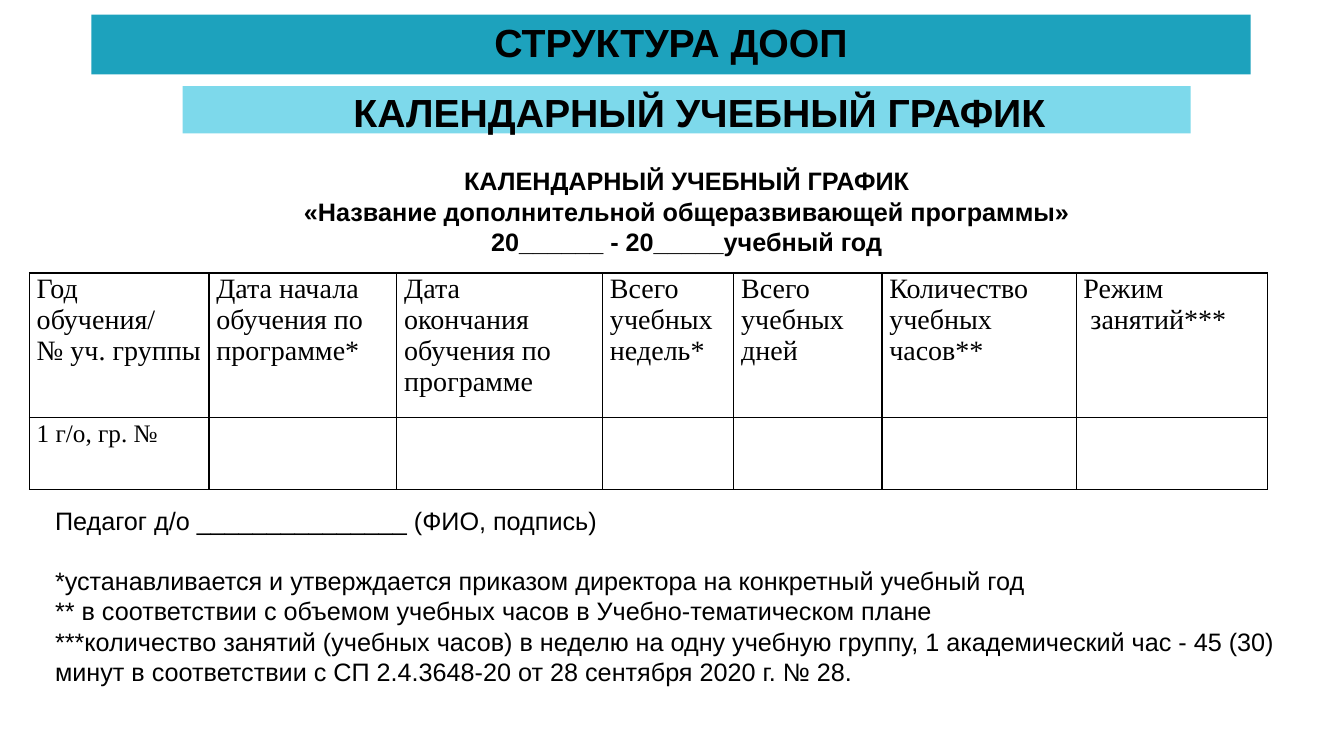
from lxml import etree
from pptx import Presentation
from pptx import util as u
from pptx.dml.color import RGBColor
from pptx.enum import shapes, text
from pptx.oxml.ns import qn

PX = 9525


def px(*values):
    return [u.Emu(v * PX) for v in values]


def rgb(value):
    return RGBColor.from_string(value)


def write(tf, lines, size=18, font="Arial", bold=False, align=text.PP_ALIGN.LEFT,
          spacing=None, before=0, after=0, indent=0):
    for i, line in enumerate(lines):
        p = tf.paragraphs[0] if i == 0 else tf.add_paragraph()
        p.alignment = align
        p.line_spacing = spacing
        p.space_before, p.space_after = u.Pt(before), u.Pt(after)
        if indent:
            p._p.get_or_add_pPr().set("marL", str(indent * PX))
        r = p.add_run()
        r.text = line
        r.font.name, r.font.size, r.font.bold = font, u.Pt(size), bold
        r.font.color.rgb = rgb(Deck.ink)


class Deck:
    """Slide builder that keeps the shared style and the current slide."""

    ink = "000000"
    serif = "Times New Roman"

    def __init__(self, width, height):
        self.prs = Presentation()
        self.prs.slide_width, self.prs.slide_height = px(width, height)
        self.s = self.prs.slides.add_slide(self.prs.slide_layouts[5])

    def fill_bar(self, sp, fill, line, **fmt):
        sp.fill.solid()
        sp.fill.fore_color.rgb = rgb(fill)
        sp.line.fill.background()
        tf = sp.text_frame
        tf.word_wrap = True
        tf.auto_size = text.MSO_AUTO_SIZE.NONE
        tf.vertical_anchor = text.MSO_ANCHOR.MIDDLE
        write(tf, [line], size=28, bold=True, before=10,
              align=text.PP_ALIGN.CENTER, **fmt)

    def title(self, box, fill, line, **fmt):
        sp = self.s.shapes.title
        sp.left, sp.top, sp.width, sp.height = px(*box)
        self.fill_bar(sp, fill, line, **fmt)

    def bar(self, box, fill, line, **fmt):
        sp = self.s.shapes.add_shape(shapes.MSO_SHAPE.RECTANGLE, *px(*box))
        sp.shadow.inherit = False
        self.fill_bar(sp, fill, line, **fmt)

    def textbox(self, box, lines, **fmt):
        tf = self.s.shapes.add_textbox(*px(*box)).text_frame
        tf.word_wrap = True
        write(tf, lines, **fmt)
        return tf

    def border(self, cell):
        tcPr = cell._tc.get_or_add_tcPr()
        for side in ("lnL", "lnR", "lnT", "lnB"):
            ln = etree.SubElement(tcPr, qn("a:" + side), w=str(u.Pt(1)))
            solid = etree.SubElement(ln, qn("a:solidFill"))
            etree.SubElement(solid, qn("a:srgbClr"), val=self.ink)

    def table(self, left, top, widths, heights, headers, first):
        box = px(left, top, sum(widths), sum(heights))
        tbl = self.s.shapes.add_table(len(heights), len(widths), *box).table
        tbl.first_row = tbl.horz_banding = False
        for col, width in zip(tbl.columns, px(*widths)):
            col.width = width
        for row, height in zip(tbl.rows, px(*heights)):
            row.height = height
        for cell in tbl.iter_cells():
            self.border(cell)
            cell.fill.background()
            cell.margin_left, cell.margin_right = px(7, 7)
            cell.margin_top = cell.margin_bottom = 0
        for cell, lines in zip(tbl.rows[0].cells, headers):
            write(cell.text_frame, lines, size=20, font=self.serif,
                  align=text.PP_ALIGN.JUSTIFY)
        write(tbl.cell(1, 0).text_frame, [first], font=self.serif,
              align=text.PP_ALIGN.JUSTIFY, spacing=1.07, after=8)


def main():
    deck = Deck(1280, 720)
    deck.title((87, 14, 1104, 57), "1DA2BD", "СТРУКТУРА ДООП", spacing=0.9)
    deck.bar((174, 82, 960, 45), "7DD9EB", "КАЛЕНДАРНЫЙ УЧЕБНЫЙ ГРАФИК",
             spacing=1.07, after=8, indent=24)
    deck.textbox((223, 153, 862, 97), [
        "КАЛЕНДАРНЫЙ УЧЕБНЫЙ ГРАФИК",
        "«Название дополнительной общеразвивающей программы»",
        "20______ - 20_____учебный год",
    ], bold=True, align=text.PP_ALIGN.CENTER)
    deck.table(28, 260, [171, 179, 196, 125, 141, 185, 182], [138, 68], [
        ["Год", "обучения/", "№ уч. группы"],
        ["Дата начала", "обучения по", "программе*"],
        ["Дата", "окончания", "обучения по", "программе"],
        ["Всего", "учебных недель*"],
        ["Всего", "учебных", "дней"],
        ["Количество", "учебных", "часов**"],
        ["Режим", " занятий***"],
    ], "1 г/о, гр. №")
    notes = deck.textbox((43, 477, 1192, 213), [
        "Педагог д/о _______________ (ФИО, подпись)",
        "*устанавливается и утверждается приказом директора на конкретный учебный год",
        "** в соответствии с объемом учебных часов в Учебно-тематическом плане",
        "***количество занятий (учебных часов) в неделю на одну учебную группу, "
        "1 академический час - 45 (30) минут в соответствии с СП 2.4.3648-20 "
        "от 28 сентября 2020 г. № 28.",
    ])
    notes.paragraphs[0].space_after = u.Pt(21)
    deck.prs.save("out.pptx")


if __name__ == "__main__":
    main()
